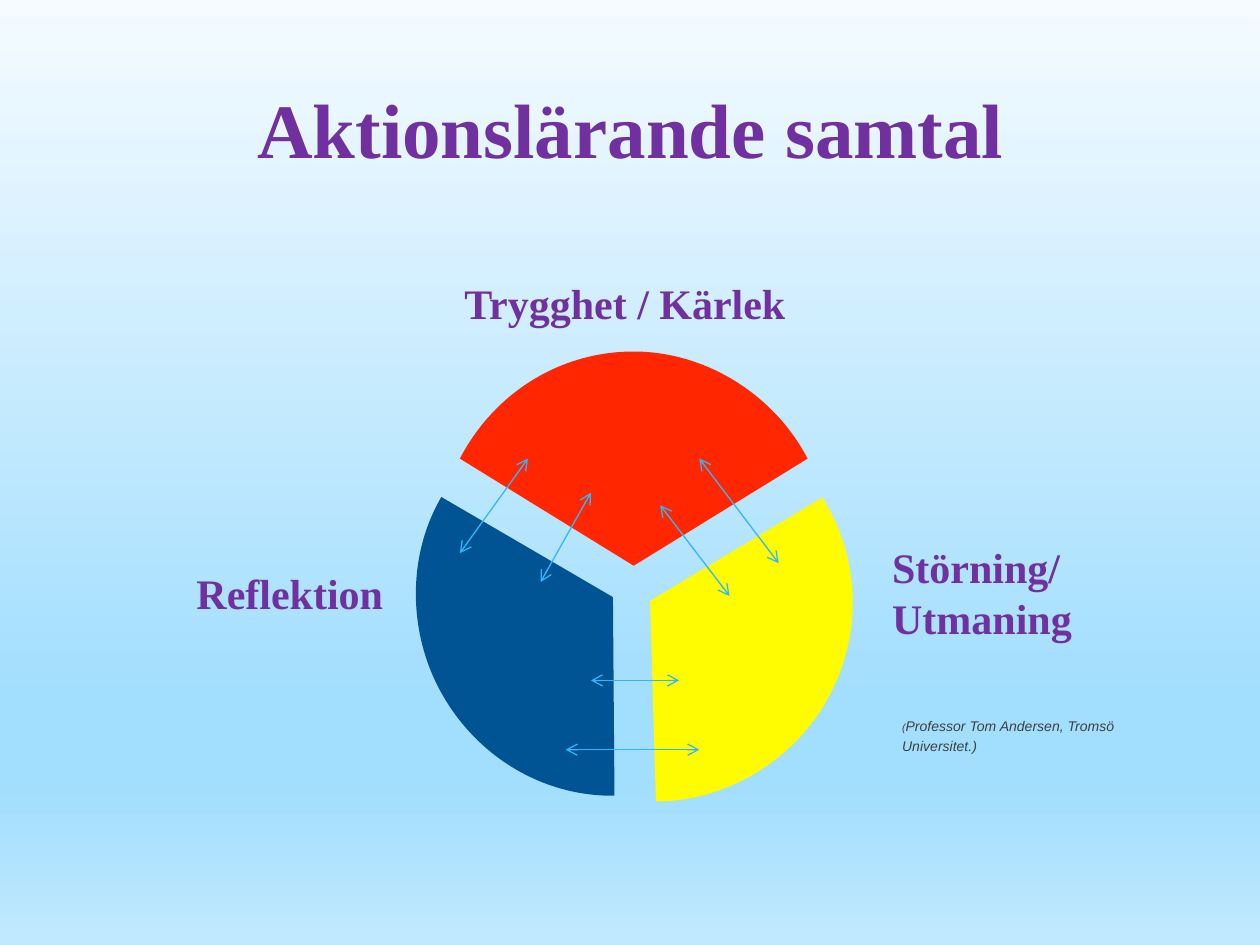
"""Build the slide with three conversation sectors joined by arrows."""
from copy import deepcopy

from lxml import etree
from pptx import Presentation
from pptx.dml.color import RGBColor
from pptx.enum import shapes, text
from pptx.oxml.ns import qn
from pptx.util import Inches, Pt

PURPLE = RGBColor(0x70, 0x30, 0xA0)
GREY = RGBColor(0x40, 0x40, 0x40)
YELLOW = RGBColor(0xFF, 0xFB, 0x00)
BLUE = RGBColor(0x00, 0x54, 0x93)
RED = RGBColor(0xFF, 0x26, 0x00)
ARROW_BLUE = RGBColor(0x31, 0xB6, 0xFD)
SKY = RGBColor(0xA2, 0xDE, 0xFE)
BACKGROUND_STOPS = [
    (0, RGBColor(0xF5, 0xFB, 0xFF)),
    (0.74, SKY),
    (0.83, SKY),
    (1, RGBColor(0xC1, 0xE9, 0xFE)),
]

SECTOR_CORNERS = [(1, 0.5), (0.5, 1), (0, 0.5)]
SECTOR_RIM = [(0.1, 0.19), (0.29, 0), (0.5, 0), (0.7, 0), (0.9, 0.19), (1, 0.5)]
SECTORS = [
    (YELLOW, (4.49, 4.35, 2.75, 1.61), 118.7),
    (BLUE, (2.82, 4.35, 2.74, 1.56), 239.9),
    (RED, (3.65, 2.79, 2.76, 1.7), 0),
]
ARROWS = [
    ((5.55, 3.64), (6.18, 4.47)),
    ((4.69, 5.4), (5.39, 5.4)),
    ((3.65, 4.39), (4.19, 3.64)),
    ((4.29, 4.62), (4.69, 3.91)),
    ((5.79, 4.73), (5.24, 4.01)),
    ((4.49, 5.95), (5.55, 5.95)),
]


def set_background(slide):
    """Fill the slide with a vertical gradient."""
    fill = slide.background.fill
    fill.gradient()
    fill.gradient_angle = 270
    stop_list = next(slide.element.iter(qn("a:gsLst")))
    while len(stop_list) < len(BACKGROUND_STOPS):
        stop_list.append(deepcopy(stop_list[0]))
    for stop, (position, color) in zip(fill.gradient_stops, BACKGROUND_STOPS):
        stop.position = position
        stop.color.rgb = color


def add_text(slide, box, paragraphs, *, font="Times New Roman", color=PURPLE,
             bold=True, italic=False, align=text.PP_ALIGN.LEFT,
             anchor=text.MSO_ANCHOR.TOP, inset=0.03, spacing=None):
    """Add a text box whose paragraphs are lists of (wording, size) runs."""
    frame = slide.shapes.add_textbox(*map(Inches, box)).text_frame
    frame.word_wrap = True
    frame.vertical_anchor = anchor
    frame.margin_left = frame.margin_right = Inches(inset)
    frame.margin_top = frame.margin_bottom = Inches(inset)
    for index, runs in enumerate(paragraphs):
        paragraph = frame.add_paragraph() if index else frame.paragraphs[0]
        paragraph.alignment = align
        paragraph.line_spacing = spacing
        for wording, size in runs:
            run = paragraph.add_run()
            run.text = wording
            run.font.name = font
            run.font.size = Pt(size)
            run.font.bold = bold
            run.font.italic = italic
            run.font.color.rgb = color


def round_rim(shape):
    """Turn each three line segments of the rim into one cubic curve."""
    outline = next(shape.element.iter(qn("a:path")))
    segments = outline.findall(qn("a:lnTo"))[len(SECTOR_CORNERS) - 1:]
    for first in range(0, len(SECTOR_RIM), 3):
        curve = etree.Element(qn("a:cubicBezTo"))
        segments[first].addprevious(curve)
        for segment in segments[first:first + 3]:
            curve.append(segment[0])
            outline.remove(segment)


def add_sector(slide, color, box, rotation):
    """Add a filled sector fitted to the box, then turned."""
    left, top, width, height = box
    start, *rest = [(Inches(left + x * width), Inches(top + y * height))
                    for x, y in SECTOR_CORNERS + SECTOR_RIM]
    builder = slide.shapes.build_freeform(*start)
    builder.add_line_segments(rest, close=True)
    shape = builder.convert_to_shape()
    round_rim(shape)
    shape.rotation = rotation
    shape.shadow.inherit = False
    shape.fill.solid()
    shape.fill.fore_color.rgb = color
    shape.line.fill.background()


def add_arrow(slide, start, end):
    """Add a thin line with an open arrowhead at both ends."""
    connector = slide.shapes.add_connector(
        shapes.MSO_CONNECTOR.STRAIGHT, *map(Inches, start + end))
    connector.line.color.rgb = ARROW_BLUE
    connector.line.width = Pt(0.75)
    properties = connector.element.spPr
    for tag in ("a:headEnd", "a:tailEnd"):
        etree.SubElement(properties.find(qn("a:ln")), qn(tag), type="arrow")
    etree.SubElement(properties, qn("a:effectLst"))


def main():
    """Build and save the presentation."""
    presentation = Presentation()
    presentation.slide_width = Inches(10)
    presentation.slide_height = Inches(7.5)
    slide = presentation.slides.add_slide(presentation.slide_layouts[6])
    set_background(slide)
    add_text(slide, (1.5, 0.39, 7.01, 1.25), [[("Aktionslärande samtal", 44)]],
             align=text.PP_ALIGN.CENTER, anchor=text.MSO_ANCHOR.MIDDLE, inset=0.05)
    add_text(slide, (3.58, 2.17, 2.76, 0.62), [[("Trygghet / Kärlek", 24)]],
             align=text.PP_ALIGN.CENTER)
    add_text(slide, (7.05, 4.27, 1.81, 0.91),
             [[("Störning/", 24)], [("Utmaning", 24)]])
    add_text(slide, (1.53, 4.47, 1.57, 0.51), [[("Reflektion", 24)]])
    add_text(slide, (7.13, 5.63, 2.05, 0.4),
             [[("(", 6), ("Professor Tom Andersen, Tromsö Universitet.)", 8)]],
             font="Arial", color=GREY, bold=False, italic=True,
             anchor=text.MSO_ANCHOR.MIDDLE, spacing=1.2)
    for sector in SECTORS:
        add_sector(slide, *sector)
    for arrow in ARROWS:
        add_arrow(slide, *arrow)
    presentation.save("out.pptx")


if __name__ == "__main__":
    main()
